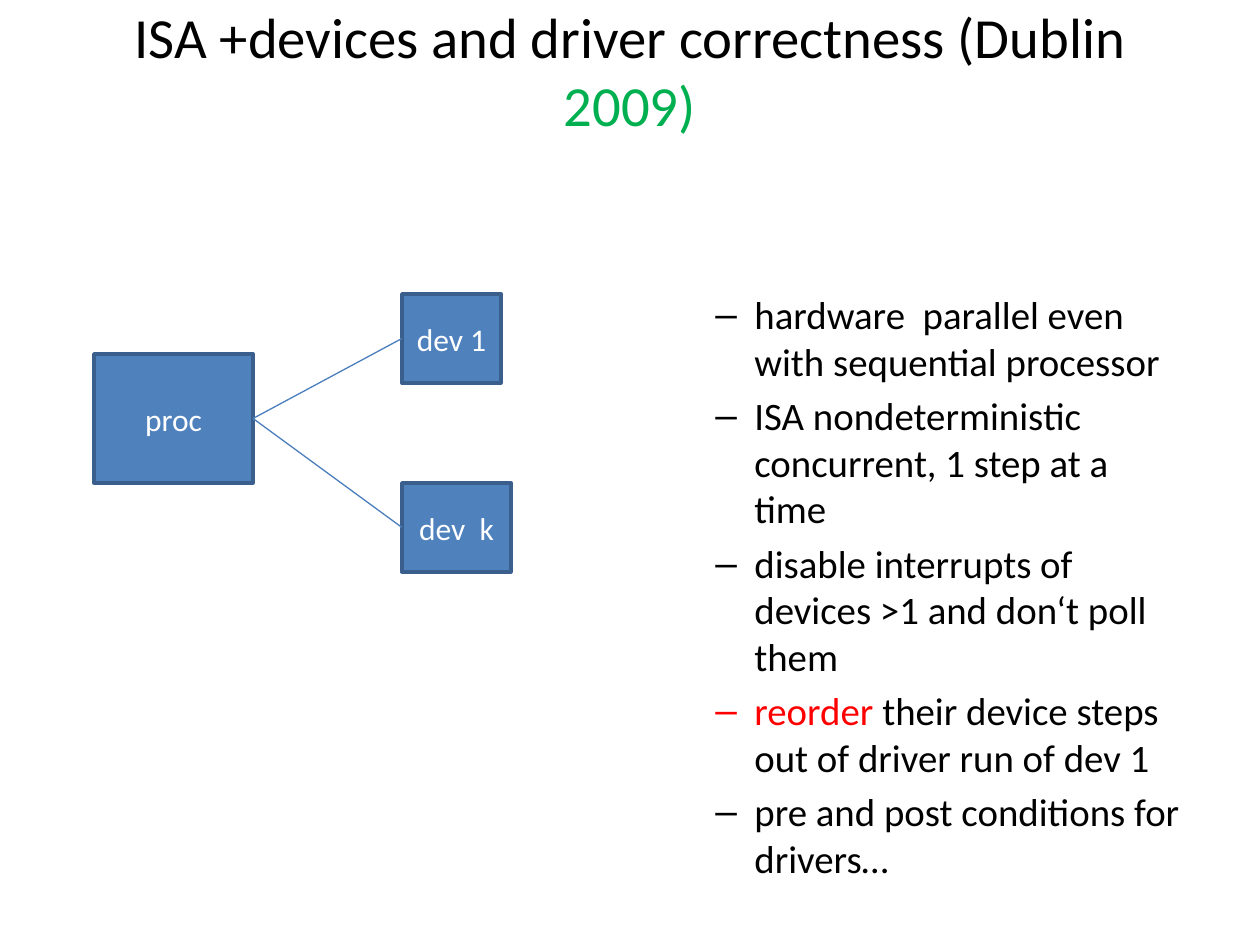
from lxml.etree import SubElement
from pptx import Presentation
from pptx.dml.color import RGBColor
from pptx.enum.shapes import MSO_CONNECTOR as Connector, MSO_SHAPE as Shape
from pptx.enum.text import MSO_ANCHOR as Anchor, PP_ALIGN as Align
from pptx.oxml.ns import qn
from pptx.util import Emu, Pt

COLORS = {
    "text": "000000", "green": "00B050", "red": "FF0000", "white": "FFFFFF",
    "box": "4F81BD", "border": "3A5F8C", "link": "4B7EBC",
}
TITLE = [("ISA +devices and driver correctness (Dublin ", "text"), ("2009)", "green")]
POINTS = [
    [("hardware  parallel even with sequential processor", "text")],
    [("ISA nondeterministic concurrent, 1 step at a time", "text")],
    [("disable interrupts of devices >1 and don‘t poll them", "text")],
    [("reorder ", "red"), ("their device steps out of driver run of dev 1", "text")],
    [("pre and post conditions for drivers…", "text")],
]
BOXES = {
    "proc": (94, 354, 159, 129),
    "dev 1": (402, 294, 99, 89),
    "dev  k": (402, 483, 109, 89),
}
LINKS = [("proc", "dev 1"), ("proc", "dev  k")]
TITLE_AREA = (63, 0, 1134, 139)
POINTS_AREA = (640, 291, 557, 590)
TEXT_INDENT, BULLET_HANG = 102, 39
RIGHT_SITE, LEFT_SITE = 3, 1


def px(value):
    return Emu(round(value * 914400 / 126))


def color(name):
    return RGBColor.from_string(COLORS[name])


def apply(target, formats):
    for name, value in formats.items():
        setattr(target, name, value)


def write(paragraph, runs, size, **formats):
    apply(paragraph, formats)
    for text, color_name in runs:
        run = paragraph.add_run()
        run.text = text
        apply(run.font, {"name": "Calibri", "size": Pt(size)})
        run.font.color.rgb = color(color_name)


def add_text_area(slide, area, **formats):
    frame = slide.shapes.add_textbox(*map(px, area)).text_frame
    apply(frame, {"word_wrap": True, **formats})
    return frame


def add_bullet(paragraph):
    properties = paragraph._p.get_or_add_pPr()
    properties.set("marL", str(px(TEXT_INDENT)))
    properties.set("indent", str(px(-BULLET_HANG)))
    SubElement(properties, qn("a:buFont"), typeface="Arial")
    SubElement(properties, qn("a:buChar"), char="–")


def add_box(slide, label, area):
    box = slide.shapes.add_shape(Shape.RECTANGLE, *map(px, area))
    box.shadow.inherit = False
    box.fill.solid()
    box.fill.fore_color.rgb = color("box")
    box.line.color.rgb = color("border")
    box.line.width = Pt(2)
    frame = box.text_frame
    apply(frame, {"word_wrap": True, "vertical_anchor": Anchor.MIDDLE})
    write(frame.paragraphs[0], [(label, "white")], 18, alignment=Align.CENTER)
    return box


def add_link(slide, source, target):
    link = slide.shapes.add_connector(Connector.STRAIGHT, 0, 0, 0, 0)
    link.begin_connect(source, RIGHT_SITE)
    link.end_connect(target, LEFT_SITE)
    link.line.color.rgb = color("link")
    link.line.width = Pt(0.75)
    SubElement(link._element.spPr, qn("a:effectLst"))


def main():
    presentation = Presentation()
    apply(presentation, {"slide_width": px(1260), "slide_height": px(945)})
    slide = presentation.slides.add_slide(presentation.slide_layouts[6])

    title = add_text_area(slide, TITLE_AREA, vertical_anchor=Anchor.MIDDLE)
    write(title.paragraphs[0], TITLE, 32.4, alignment=Align.CENTER)

    points = add_text_area(slide, POINTS_AREA, margin_top=0, margin_bottom=0)
    for index, runs in enumerate(POINTS):
        paragraph = points.add_paragraph() if index else points.paragraphs[0]
        write(paragraph, runs, 22.2, space_before=Pt(4.4 if index else 0))
        add_bullet(paragraph)

    boxes = {label: add_box(slide, label, area) for label, area in BOXES.items()}
    for source, target in LINKS:
        add_link(slide, boxes[source], boxes[target])

    presentation.save("out.pptx")


if __name__ == "__main__":
    main()
